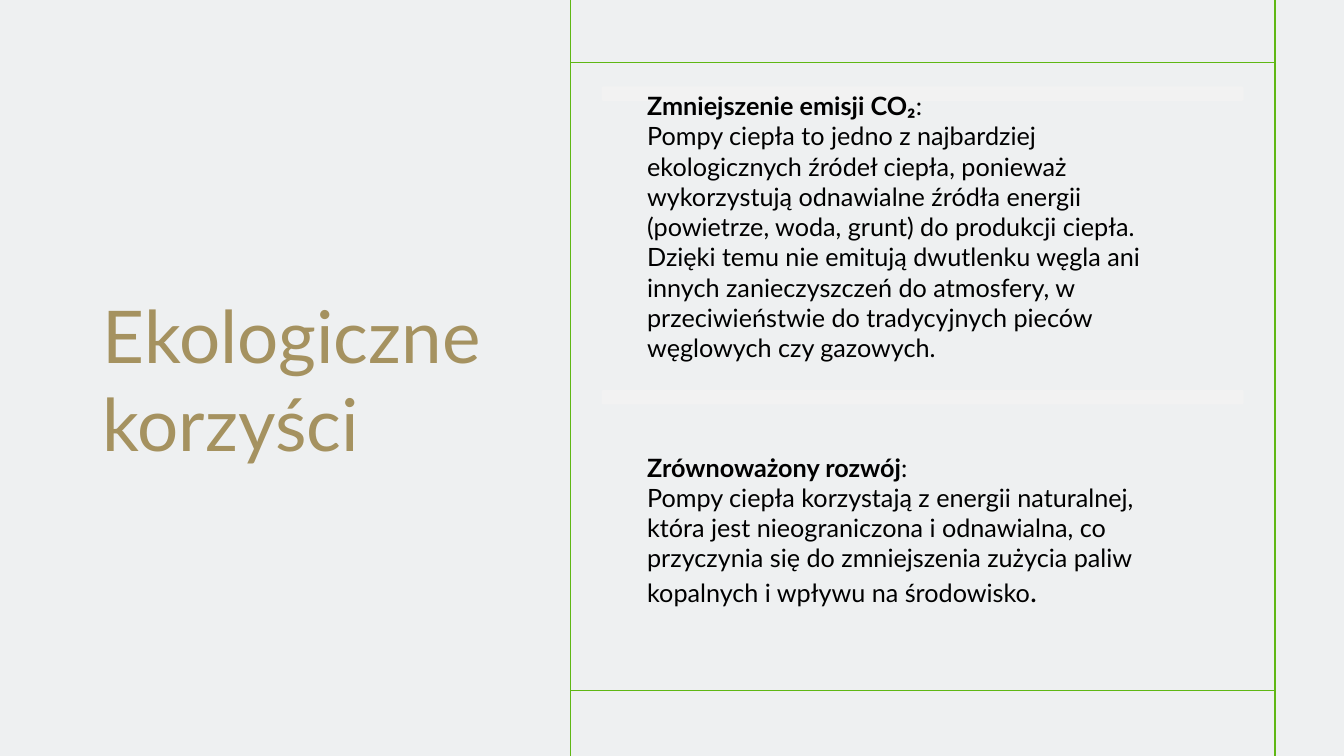
from pptx import Presentation
from pptx.dml.color import RGBColor
from pptx.enum import shapes, text
from pptx.oxml import ns
from pptx.util import Cm, Pt
from lxml import etree

# Content: each benefit is a list of (text, size, bold) runs; None is a line break
TITLE = "Ekologiczne korzyści"
BENEFITS = [
    [("Zmniejszenie emisji CO₂", 18, True), (":", 18, False), None,
     ("Pompy ciepła to jedno z najbardziej ekologicznych źródeł ciepła, ponieważ "
      "wykorzystują odnawialne źródła energii (powietrze, woda, grunt) do produkcji "
      "ciepła. Dzięki temu nie emitują dwutlenku węgla ani innych zanieczyszczeń do "
      "atmosfery, w przeciwieństwie do tradycyjnych pieców węglowych czy gazowych.",
      18, False)],
    [("Zrównoważony rozwój", 18, True), (":", 18, False), None,
     ("Pompy ciepła korzystają z energii naturalnej, która jest nieograniczona i "
      "odnawialna, co przyczynia się do zmniejszenia zużycia paliw kopalnych i "
      "wpływu na środowisko", 18, False), (".", 21, False)],
]
FONT = "Lato"
BACKGROUND, GREEN, GOLD, BAR, BLACK = "EEF0F1", "5FB714", "A59260", "F2F2F2", "000000"

# Geometry in centimetres
WIDTH, HEIGHT = 33.87, 19.05
FRAME_LEFT, FRAME_RIGHT, FRAME_TOP, FRAME_BOTTOM = 14.38, 32.13, 1.57, 17.4
FIRST_TOP, STEP = 2.18, 7.65


def color(value):
    return RGBColor.from_string(value)


def style_run(run, size, value, bold=False):
    run.font.name, run.font.size, run.font.bold = FONT, Pt(size), bold
    run.font.color.rgb = color(value)


def add_text(slide, left, top, width, height, inset=None):
    frame = slide.shapes.add_textbox(Cm(left), Cm(top), Cm(width), Cm(height)).text_frame
    frame.word_wrap = True
    frame.vertical_anchor = text.MSO_ANCHOR.MIDDLE
    if inset:
        frame.margin_left = frame.margin_right = Cm(inset)
        frame.margin_top = frame.margin_bottom = Cm(inset)
    return frame


def add_line(slide, x1, y1, x2, y2):
    line = slide.shapes.add_connector(
        shapes.MSO_CONNECTOR.STRAIGHT, Cm(x1), Cm(y1), Cm(x2), Cm(y2))
    line.line.color.rgb = color(GREEN)
    line.line.width = Pt(1)
    etree.SubElement(line._element.spPr, ns.qn("a:effectLst"))


def add_benefit(slide, top, parts):
    bar = slide.shapes.add_shape(
        shapes.MSO_SHAPE.ROUNDED_RECTANGLE, Cm(15.16), Cm(top), Cm(16.18), Cm(0.36))
    bar.adjustments[0] = 0.1
    bar.shadow.inherit = False
    bar.fill.solid()
    bar.fill.fore_color.rgb = color(BAR)
    bar.line.fill.background()

    paragraph = add_text(slide, 15.57, top, 14.66, 7.06, inset=0.74).paragraphs[0]
    for part in parts:
        if part is None:
            paragraph.add_line_break()
            continue
        wording, size, bold = part
        run = paragraph.add_run()
        run.text = wording
        style_run(run, size, BLACK, bold)


def main():
    presentation = Presentation()
    presentation.slide_width, presentation.slide_height = Cm(WIDTH), Cm(HEIGHT)
    slide = presentation.slides.add_slide(presentation.slide_layouts[6])
    slide.background.fill.solid()
    slide.background.fill.fore_color.rgb = color(BACKGROUND)

    # Title
    frame = add_text(slide, 2.34, 1.63, 11.33, 15.82)
    frame.text = TITLE
    style_run(frame.paragraphs[0].runs[0], 52, GOLD)

    # Green frame lines
    for y in (FRAME_TOP, FRAME_BOTTOM):
        add_line(slide, FRAME_LEFT, y, FRAME_RIGHT, y)
    for x in (FRAME_LEFT, FRAME_RIGHT):
        add_line(slide, x, 0, x, HEIGHT)

    # Benefits
    for index, parts in enumerate(BENEFITS):
        add_benefit(slide, FIRST_TOP + index * STEP, parts)

    presentation.save("out.pptx")


if __name__ == "__main__":
    main()
